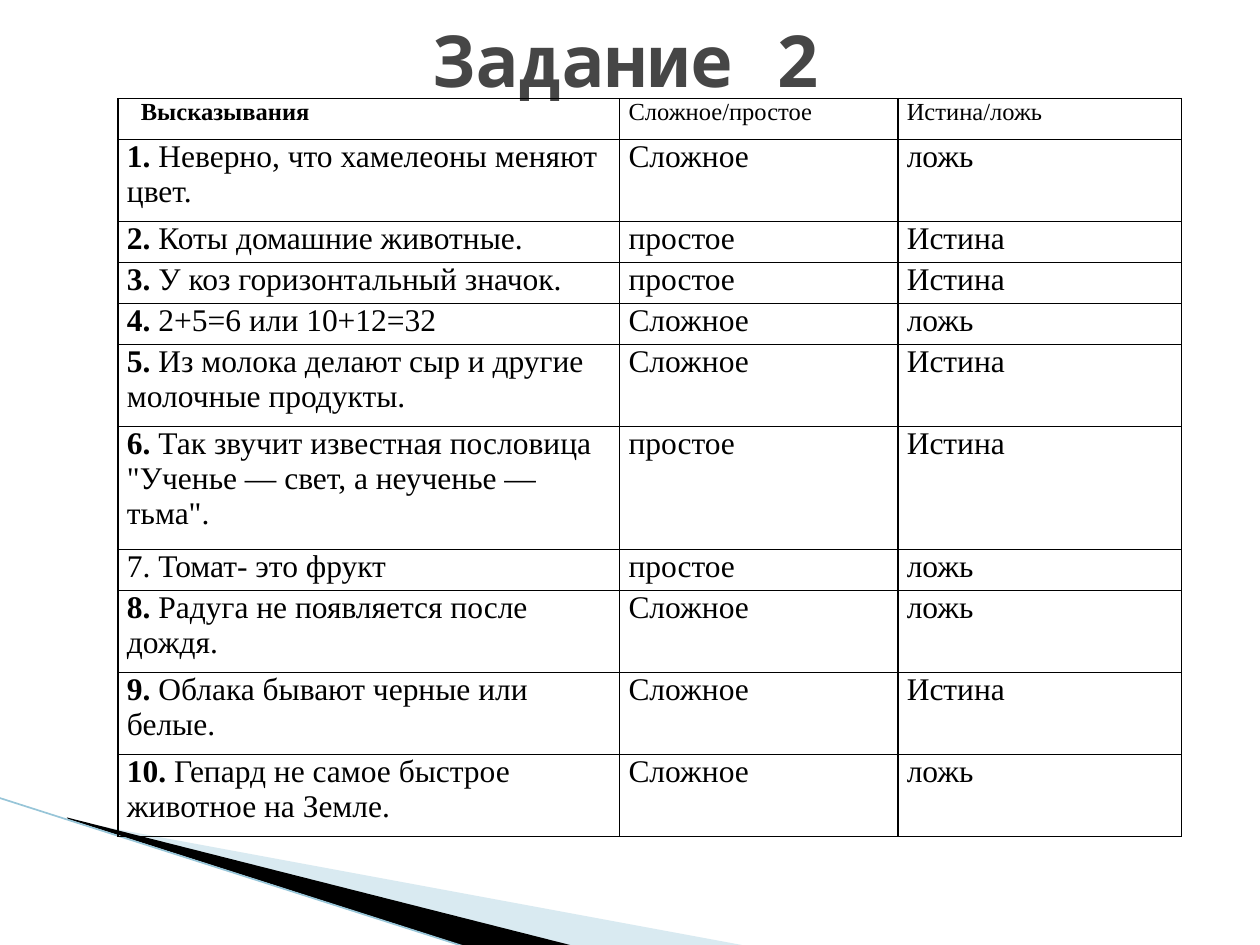
"""Build the task slide: a table of statements over a wedge corner."""
import dataclasses
import typing

import lxml.etree
import pptx
import pptx.dml.color
import pptx.enum.shapes
import pptx.enum.text
import pptx.oxml.ns
import pptx.util

Cm = pptx.util.Cm
Pt = pptx.util.Pt
RGBColor = pptx.dml.color.RGBColor
qn = pptx.oxml.ns.qn

BLACK = RGBColor(0x00, 0x00, 0x00)
GREY = RGBColor(0x46, 0x46, 0x46)
PALE = RGBColor(0xA0, 0xCB, 0xDC)
EDGE = RGBColor(0x97, 0xC5, 0xD8)
SERIF = "Times New Roman"
MONO = "Noto Sans Mono"


@dataclasses.dataclass
class Claim:
    label: str
    text: str
    form: str
    truth: str
    lines: int = 1


@dataclasses.dataclass
class Wedge:
    frame: tuple[float, float, float, float]
    points: list[tuple[float, float]]
    color: RGBColor
    alpha: int = 100


WEDGES = [
    Wedge((1.98, 13.89, 10.57, 4.01),
          [(1.4, 16.54), (15.11, 19.08), (11.58, 19.08), (1.4, 16.51)], PALE, 40),
    Wedge((-0.15, 16.08, 10.57, 2.34),
          [(1.35, 16.48), (11.61, 19.08), (9.45, 19.1), (1.37, 16.51)], BLACK),
]

CLAIMS = [
    Claim("1.", " Неверно, что хамелеоны меняют цвет.", "Сложное", "ложь", 2),
    Claim("2.", " Коты домашние животные.", "простое", "Истина"),
    Claim("3.", " У коз горизонтальный значок.", "простое", "Истина"),
    Claim("4.", " 2+5=6 или 10+12=32", "Сложное", "ложь"),
    Claim("5.", " Из молока делают сыр и другие молочные продукты.", "Сложное", "Истина", 2),
    Claim("6.", " Так звучит известная пословица \"Ученье — свет, а неученье — тьма\".",
          "простое", "Истина", 3),
    Claim("", "7. Томат- это фрукт", "простое", "ложь"),
    Claim("8.", " Радуга не появляется после дождя.", "Сложное", "ложь", 2),
    Claim("9.", " Облака бывают черные или белые.", "Сложное", "Истина", 2),
    Claim("10.", " Гепард не самое быстрое животное на Земле.", "Сложное", "ложь", 2),
]


def add_run(para: typing.Any, text: str, size: float, bold: bool = False,
            face: str = SERIF, color: RGBColor = BLACK) -> None:
    run = para.add_run()
    run.text = text
    run.font.size = Pt(size)
    run.font.bold = bold
    run.font.name = face
    run.font.color.rgb = color


def set_frame(shape: typing.Any, frame: tuple[float, float, float, float]) -> None:
    left, top, wide, high = map(Cm, frame)
    props = shape._element.spPr
    for spot in props.iter(qn("a:pt")):
        spot.set("x", str(int(spot.get("x")) + shape.left - left))
        spot.set("y", str(int(spot.get("y")) + shape.top - top))
    route = next(props.iter(qn("a:path")))
    route.set("w", str(wide))
    route.set("h", str(high))
    shape.left, shape.top, shape.width, shape.height = left, top, wide, high


def add_wedge(slide: typing.Any, wedge: Wedge) -> None:
    points = [(Cm(x), Cm(y)) for x, y in wedge.points]
    maker = slide.shapes.build_freeform(*points[0])
    maker.add_line_segments(points[1:], close=True)
    shape = maker.convert_to_shape()
    set_frame(shape, wedge.frame)
    shape.shadow.inherit = False
    shape.line.fill.background()
    shape.fill.solid()
    shape.fill.fore_color.rgb = wedge.color
    if wedge.alpha < 100:
        tone = next(shape._element.spPr.iter(qn("a:srgbClr")))
        lxml.etree.SubElement(tone, qn("a:alpha"), val=str(wedge.alpha * 1000))


def add_edge(slide: typing.Any) -> None:
    edge = slide.shapes.add_connector(
        pptx.enum.shapes.MSO_CONNECTOR.STRAIGHT, Cm(-0.03), Cm(16.08), Cm(9.42), Cm(19.1))
    edge.line.color.rgb = EDGE
    edge.line.width = Pt(0.95)
    lxml.etree.SubElement(edge._element.spPr, qn("a:effectLst"))


def frame_cell(cell: typing.Any) -> None:
    cell.margin_left = cell.margin_right = Cm(0.18)
    cell.margin_top = cell.margin_bottom = 0
    props = cell._tc.get_or_add_tcPr()
    for side in ("a:lnL", "a:lnR", "a:lnT", "a:lnB"):
        line = lxml.etree.SubElement(props, qn(side), w=str(Pt(1)))
        fill = lxml.etree.SubElement(line, qn("a:solidFill"))
        lxml.etree.SubElement(fill, qn("a:srgbClr"), val=str(BLACK))
    cell.fill.background()


def fill_row(table: typing.Any, row: int, claim: Claim, size: float) -> None:
    parts = [[(claim.label, True), (claim.text, False)],
             [(claim.form, False)], [(claim.truth, False)]]
    for col, runs in enumerate(parts):
        cell = table.cell(row, col)
        frame_cell(cell)
        for text, bold in runs:
            if text:
                add_run(cell.text_frame.paragraphs[0], text, size, bold)


def add_table(slide: typing.Any) -> None:
    rows = [Claim("Высказывания", "", "Сложное/простое", "Истина/ложь"), *CLAIMS]
    high = Cm(14.88)
    unit = high // sum(claim.lines for claim in rows)
    table = slide.shapes.add_table(
        len(rows), 3, Cm(2.38), Cm(1.99), Cm(21.44), high).table
    table.first_row = table.horz_banding = False
    for col, wide in zip(table.columns, (10.11, 5.61, 5.72)):
        col.width = Cm(wide)
    for row, claim in enumerate(rows):
        table.rows[row].height = unit * claim.lines
        fill_row(table, row, claim, 18 if row else 14)
    head = table.cell(0, 0).text_frame.paragraphs[0]
    head._p.get_or_add_pPr().set("marL", str(Cm(0.28)))


def set_title(slide: typing.Any) -> None:
    title = slide.shapes.title
    title.left, title.top = Cm(1.19), Cm(-0.41)
    title.width, title.height = Cm(22.86), Cm(3.18)
    frame = title.text_frame
    frame.vertical_anchor = pptx.enum.text.MSO_ANCHOR.MIDDLE
    para = frame.paragraphs[0]
    para.alignment = pptx.enum.text.PP_ALIGN.CENTER
    add_run(para, "Задание 2", 41, True, MONO, GREY)


def main() -> None:
    deck = pptx.Presentation()
    deck.slide_width, deck.slide_height = Cm(25.4), Cm(19.05)
    slide = deck.slides.add_slide(deck.slide_layouts[5])
    for wedge in WEDGES:
        add_wedge(slide, wedge)
    add_edge(slide)
    set_title(slide)
    add_table(slide)
    deck.save("out.pptx")


if __name__ == "__main__":
    main()
